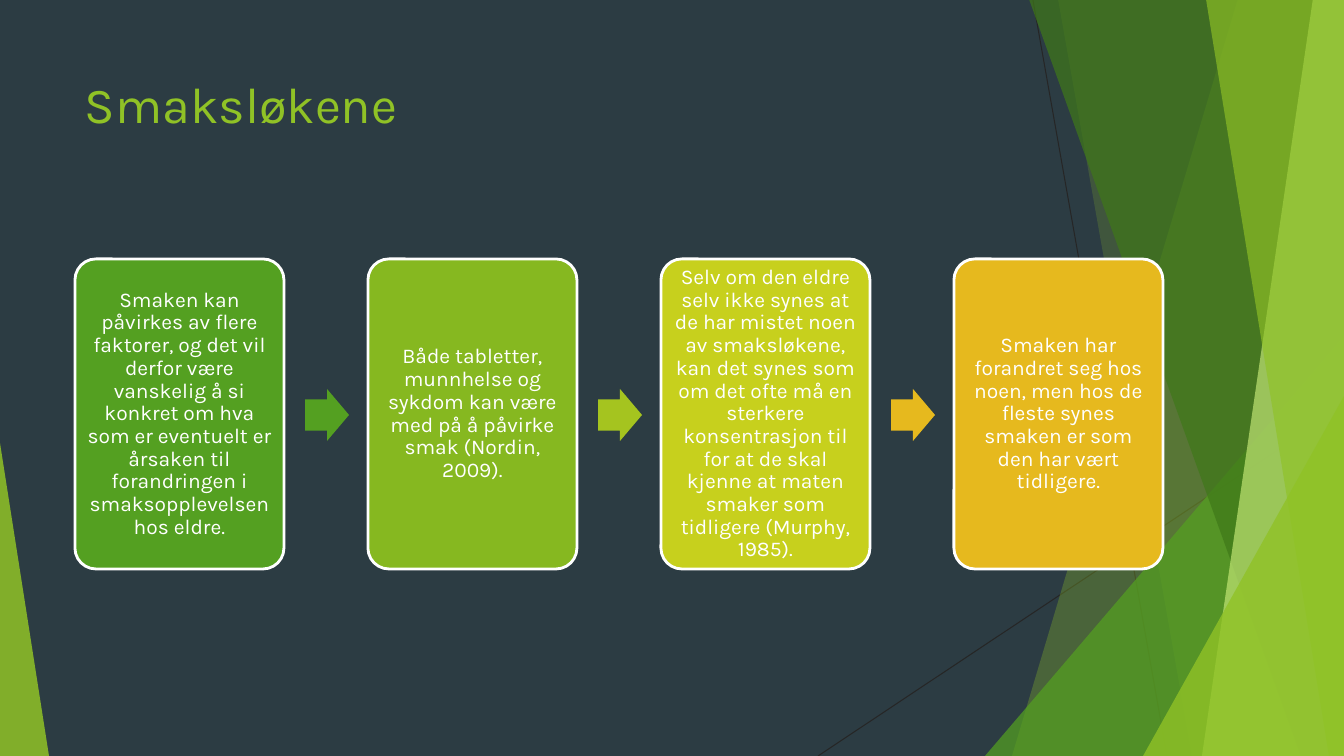
from dataclasses import dataclass

from lxml import etree
from pptx import Presentation
from pptx import util as u
from pptx.dml.color import RGBColor
from pptx.enum import shapes, text
from pptx.oxml import ns

SCALE = 914400 / 100.8
WIDTH, HEIGHT = 1344, 756
FONT = "Karla"

SLATE = RGBColor(0x2C, 0x3C, 0x43)
CHARCOAL = RGBColor(0x26, 0x26, 0x26)
WHITE = RGBColor(0xFF, 0xFF, 0xFF)
LIME = RGBColor(0x90, 0xC2, 0x26)
PALE_LIME = RGBColor(0xC0, 0xE4, 0x74)
GREEN = RGBColor(0x54, 0xA0, 0x21)
FOREST = RGBColor(0x3F, 0x78, 0x19)
LEAF = RGBColor(0x86, 0xB8, 0x20)
MOSS = RGBColor(0xA5, 0xC4, 0x1F)
YELLOW = RGBColor(0xC7, 0xD0, 0x1D)
AMBER = RGBColor(0xE6, 0xB9, 0x1E)

CARD_LEFT, CARD_TOP, CARD_WIDTH, CARD_HEIGHT = 75, 259, 209, 310
CARD_PITCH = 293
ARROW_OFFSET, ARROW_TOP, ARROW_WIDTH, ARROW_HEIGHT = 230, 389, 44, 52


@dataclass
class Ray:
    start: tuple[int, int]
    end: tuple[int, int]


@dataclass
class Band:
    top_x: int
    bottom_x: int
    color: RGBColor
    opacity: int


@dataclass
class Wedge:
    left: int
    top: int
    width: int
    height: int
    peak: int
    color: RGBColor
    opacity: int


@dataclass
class Step:
    words: str
    color: RGBColor
    arrow_color: RGBColor | None = None


RAYS = [Ray((1033, 0), (1167, HEIGHT)), Ray((WIDTH, 406), (818, HEIGHT))]

BACKDROP = [
    Band(1238, 1012, LIME, 30),
    Band(1058, 1192, LIME, 20),
    Wedge(985, 336, 359, 420, 1, GREEN, 72),
    Band(1029, 1301, FOREST, 70),
    Band(1313, 1202, PALE_LIME, 70),
    Band(1206, 1329, LIME, 65),
    Wedge(1143, 396, 201, 360, 1, LIME, 80),
    Wedge(0, 443, 49, 313, 0, LIME, 85),
]

STEPS = [
    Step("Smaken kan påvirkes av flere faktorer, og det vil derfor være vanskelig å si "
         "konkret om hva som er eventuelt er årsaken til forandringen i "
         "smaksopplevelsen hos eldre.", GREEN, GREEN),
    Step("Både tabletter, munnhelse og sykdom kan være med på å påvirke smak "
         "(Nordin, 2009).", LEAF, MOSS),
    Step("Selv om den eldre selv ikke synes at de har mistet noen av smaksløkene, kan "
         "det synes som om det ofte må en sterkere konsentrasjon til for at de skal "
         "kjenne at maten smaker som tidligere (Murphy, 1985).", YELLOW, AMBER),
    Step("Smaken har forandret seg hos noen, men hos de fleste synes smaken er som "
         "den har vært tidligere.", AMBER),
]


def px(length: int) -> u.Emu:
    return u.Emu(round(length * SCALE))


def paint(shape, color: RGBColor, opacity: int = 100) -> None:
    shape.shadow.inherit = False
    shape.fill.solid()
    shape.fill.fore_color.rgb = color
    shape.line.fill.background()
    if opacity < 100:
        color_node = shape.element.spPr.find(ns.qn("a:solidFill"))[0]
        etree.SubElement(color_node, ns.qn("a:alpha"), val=str(opacity * 1000))


def add_preset(page, kind, left: int, top: int, width: int, height: int, *adjustments: float):
    shape = page.shapes.add_shape(kind, px(left), px(top), px(width), px(height))
    for index, value in enumerate(adjustments):
        shape.adjustments[index] = value
    return shape


def write(box, words: str, size: int, color: RGBColor, frame_format: dict,
          para_format: dict) -> None:
    frame = box.text_frame
    for name, value in frame_format.items():
        setattr(frame, name, value)
    para = frame.paragraphs[0]
    for name, value in para_format.items():
        setattr(para, name, value)
    span = para.add_run()
    span.text = words
    for name, value in {"name": FONT, "size": u.Pt(size)}.items():
        setattr(span.font, name, value)
    span.font.color.rgb = color


def draw_ray(page, ray: Ray) -> None:
    line = page.shapes.add_connector(
        shapes.MSO_CONNECTOR.STRAIGHT, *map(px, ray.start + ray.end))
    line.line.color.rgb = CHARCOAL
    line.line.width = u.Pt(0.75)
    etree.SubElement(line.element.spPr, ns.qn("a:effectLst"))


def draw_backdrop(page, piece: Band | Wedge) -> None:
    if isinstance(piece, Band):
        builder = page.shapes.build_freeform(piece.top_x, -1, scale=SCALE)
        builder.add_line_segments(
            [(WIDTH, -1), (WIDTH, HEIGHT), (piece.bottom_x, HEIGHT)], close=True)
        shape = builder.convert_to_shape()
    else:
        shape = add_preset(page, shapes.MSO_SHAPE.ISOSCELES_TRIANGLE, piece.left,
                           piece.top, piece.width, piece.height, piece.peak)
    paint(shape, piece.color, piece.opacity)


def draw_title(page) -> None:
    box = page.shapes.add_textbox(px(75), px(68), px(948), px(145))
    write(box, "Smaksløkene", 36, LIME,
          {"word_wrap": True, "vertical_anchor": text.MSO_ANCHOR.TOP},
          {"alignment": text.PP_ALIGN.LEFT})


def draw_step(page, step: Step, left: int) -> None:
    card = add_preset(page, shapes.MSO_SHAPE.ROUNDED_RECTANGLE,
                      left, CARD_TOP, CARD_WIDTH, CARD_HEIGHT, 0.1)
    paint(card, step.color)
    card.line.color.rgb = WHITE
    card.line.width = u.Pt(2)
    margins = {f"margin_{side}": px(6) for side in ("left", "top", "right", "bottom")}
    write(card, step.words, 15, WHITE,
          {"word_wrap": True, "vertical_anchor": text.MSO_ANCHOR.MIDDLE, **margins},
          {"alignment": text.PP_ALIGN.CENTER, "line_spacing": 0.9})
    if step.arrow_color is not None:
        arrow = add_preset(page, shapes.MSO_SHAPE.RIGHT_ARROW, left + ARROW_OFFSET,
                           ARROW_TOP, ARROW_WIDTH, ARROW_HEIGHT, 0.6, 0.5)
        paint(arrow, step.arrow_color)


def main() -> None:
    deck = Presentation()
    deck.slide_width, deck.slide_height = px(WIDTH), px(HEIGHT)
    page = deck.slides.add_slide(deck.slide_layouts[6])
    page.background.fill.solid()
    page.background.fill.fore_color.rgb = SLATE
    for ray in RAYS:
        draw_ray(page, ray)
    for piece in BACKDROP:
        draw_backdrop(page, piece)
    draw_title(page)
    for index, step in enumerate(STEPS):
        draw_step(page, step, CARD_LEFT + index * CARD_PITCH)
    deck.save("out.pptx")


if __name__ == "__main__":
    main()
